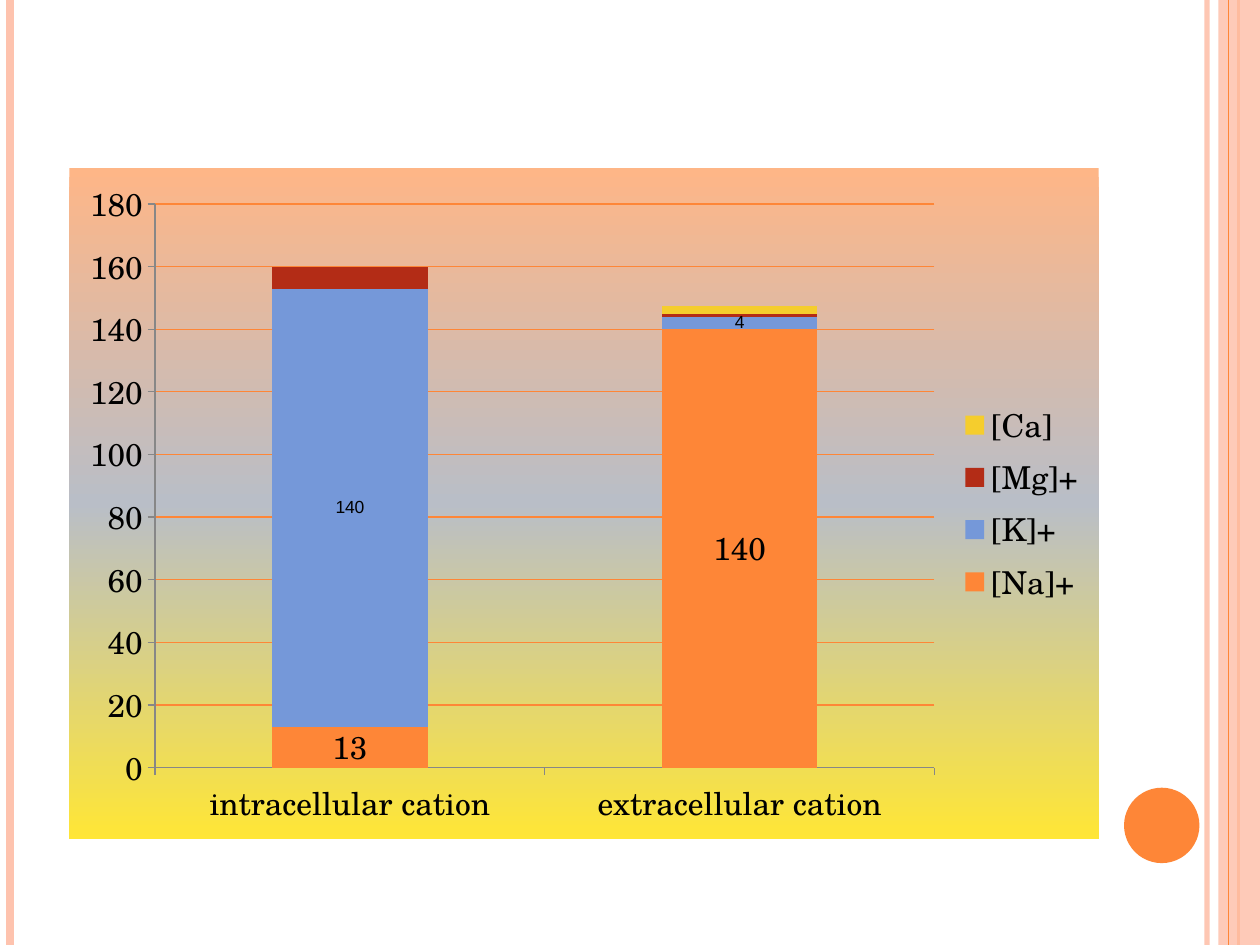
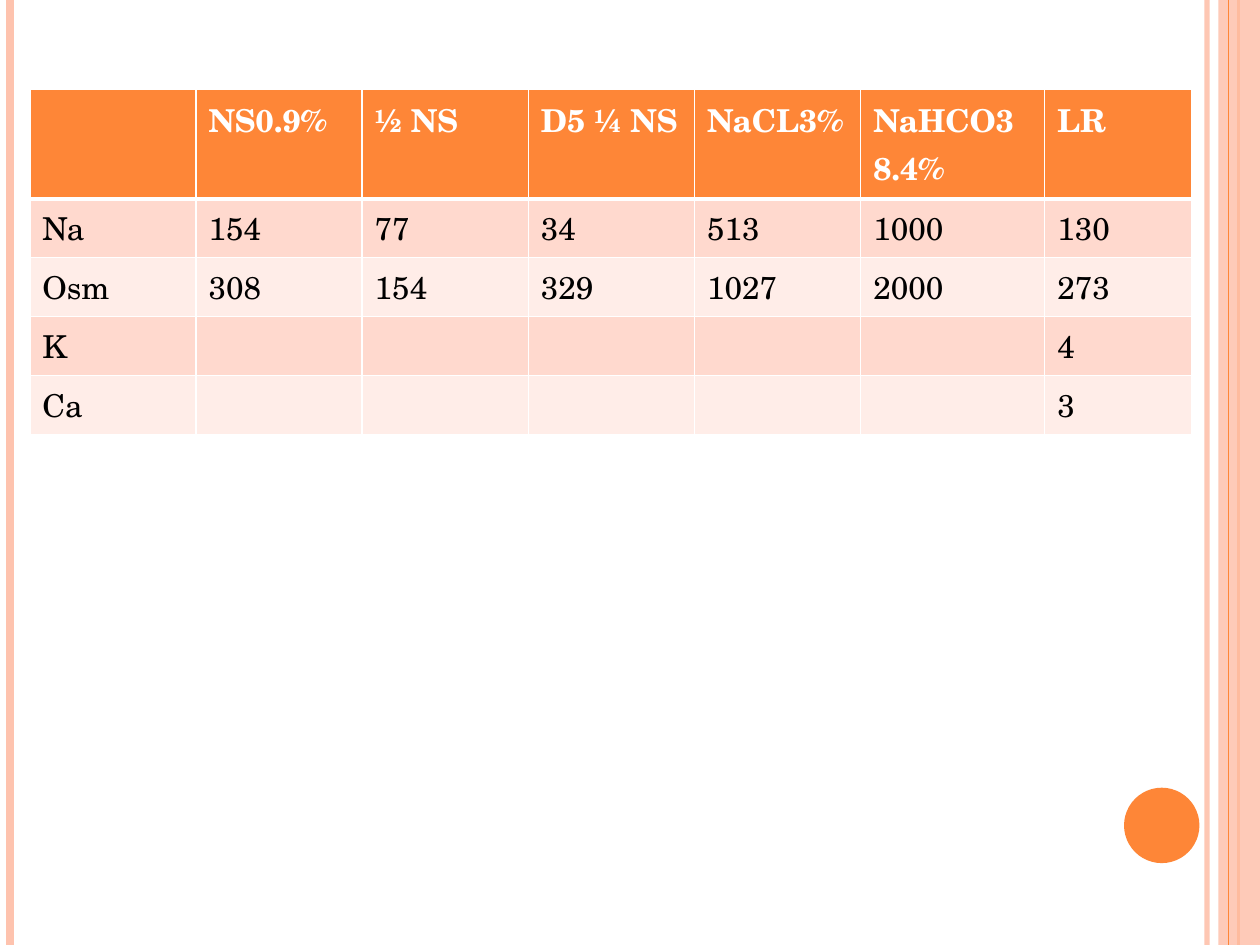
from lxml import etree
from pptx import Presentation, util as u
from pptx.chart import data
from pptx.dml import color
from pptx.enum import chart as ch, shapes
from pptx.oxml import ns

FONT = "TeX Gyre Schola"
ORANGE, PEACH, WHITE, BLACK, GRAY = "FE8637", "FEC3AE", "FFFFFF", "000000", "878787"
BANDS = "FFD9CE", "FFEDE8"
WIDE, HIGH = 25.4, 19.05

# Each rule: x in cm, colour, width in points, opacity in percent
BACK = [(24.33, PEACH, 3, 93), (0.21, PEACH, 4.5, 100), (24.97, ORANGE, 1.5, 100)]
FRONT = [(24.77, ORANGE, 0.75, 100)]

CATS = "intracellular cation", "extracellular cation"
IONS = [("[Na]+", (13, 140), ORANGE, {"size": u.Pt(18), "name": FONT}),
        ("[K]+", (140, 4), "7598D9", {"size": u.Pt(10), "name": "Arial"}),
        ("[Mg]+", (7, 1), "B32C16", None),
        ("[Ca]", (None, 2.5), "F5CD2D", None)]
SKY = [(0, "FEB687"), (50, "B9BEC7"), (100, "FFE636")]

FLUIDS = [
    ["", "NS0.9%", "½ NS", "D5 ¼ NS", "NaCL3%", "NaHCO3 8.4%", "LR"],
    ["Na", "154", "77", "34", "513", "1000", "130"],
    ["Osm", "308", "154", "329", "1027", "2000", "273"],
    ["K", "", "", "", "", "", "4"],
    ["Ca", "", "", "", "", "", "3"],
]
COLS = [3.35] * 5 + [3.71, 2.97]


def rgb(code):
    return color.RGBColor.from_string(code)


def box(*sides):
    return [u.Cm(side) for side in sides]


def style(font, hue, **form):
    font.color.rgb = rgb(hue)
    for key, val in form.items():
        setattr(font, key, val)


def sub(node, tag, **form):
    """Append a child element such as a:ln."""
    return etree.SubElement(node, ns.qn(tag), {k: str(v) for k, v in form.items()})


def paint(fill, code, alpha=100):
    fill.solid()
    fill.fore_color.rgb = rgb(code)
    if alpha < 100:
        hue = fill._xPr.find(".//" + ns.qn("a:srgbClr"))
        sub(hue, "a:alpha", val=alpha * 1000)


def rules(slide, specs):
    for x, hue, width, alpha in specs:
        line = slide.shapes.add_connector(
            shapes.MSO_CONNECTOR.STRAIGHT, *box(x, 0, x, HIGH))
        line.line.width = u.Pt(width)
        paint(line.line.fill, hue, alpha)
        sub(line._element.spPr, "a:effectLst")


def plain(slide, kind, place, hue, alpha=100):
    shape = slide.shapes.add_shape(kind, *box(*place))
    shape.shadow.inherit = False
    shape.line.fill.background()
    paint(shape.fill, hue, alpha)


def frame(slide):
    """Draw the side bands and the corner disc that all slides share."""
    rules(slide, BACK)
    plain(slide, shapes.MSO_SHAPE.RECTANGLE, (24.56, 0, WIDE - 24.56, HIGH), PEACH, 87)
    rules(slide, FRONT)
    plain(slide, shapes.MSO_SHAPE.OVAL, (22.66, 15.88, 1.52, 1.52), ORANGE)


def shade(chart, stops):
    """Fill the chart area with a gradient from top to bottom."""
    props = etree.Element(ns.qn("c:spPr"))
    grad = sub(props, "a:gradFill", rotWithShape=1)
    row = sub(grad, "a:gsLst")
    for pos, hue in stops:
        sub(sub(row, "a:gs", pos=pos * 1000), "a:srgbClr", val=hue)
    sub(grad, "a:lin", ang=90 * 60000, scaled=0)
    sub(sub(props, "a:ln"), "a:noFill")
    chart._chartSpace.find(ns.qn("c:chart")).addnext(props)


def cations(slide, place):
    """Stacked columns of the cations inside and outside the cell."""
    info = data.CategoryChartData()
    info.categories = CATS
    for name, vals, *_ in IONS:
        info.add_series(name, vals)
    chart = slide.shapes.add_chart(
        ch.XL_CHART_TYPE.COLUMN_STACKED, *box(*place), info).chart
    style(chart.font, BLACK, size=u.Pt(18), name=FONT)
    shade(chart, SKY)
    chart.has_title = False
    chart.has_legend = True
    chart.legend.position = ch.XL_LEGEND_POSITION.RIGHT
    chart.legend.include_in_layout = False

    plot = chart.plots[0]
    plot.gap_width, plot.overlap, plot.vary_by_categories = 150, 100, False
    for bar, (_, _, hue, form) in zip(plot.series, IONS):
        bar.invert_if_negative = False
        paint(bar.format.fill, hue)
        if form:
            bar.data_labels.show_value = True
            style(bar.data_labels.font, BLACK, **form)

    for axis in chart.category_axis, chart.value_axis:
        axis.major_tick_mark = ch.XL_TICK_MARK.OUTSIDE
        axis.format.line.width = u.Pt(0.75)
        paint(axis.format.line.fill, GRAY)
    scale = chart.value_axis
    scale.minimum_scale, scale.maximum_scale, scale.major_unit = 0, 180, 20
    grid = scale.major_gridlines.format.line
    grid.width = u.Pt(0.75)
    paint(grid.fill, ORANGE)


def edge(cell, **widths):
    """Draw white borders; widths are points by side L, R, T, B."""
    for side, width in widths.items():
        line = sub(cell._tc.get_or_add_tcPr(), "a:ln" + side, w=u.Pt(width))
        sub(sub(line, "a:solidFill"), "a:srgbClr", val=WHITE)


def fluids(slide, place):
    """Table of the ion content of each infusion fluid."""
    table = slide.shapes.add_table(len(FLUIDS), len(COLS), *box(*place)).table
    for col, width in zip(table.columns, COLS):
        col.width = u.Cm(width)
    for r, words in enumerate(FLUIDS):
        table.rows[r].height = u.Cm(1.04)
        head = r == 0
        for c, word in enumerate(words):
            cell = table.cell(r, c)
            edge(cell, L=1, R=1, T=3 if r == 1 else 1, B=3 if head else 1)
            paint(cell.fill, ORANGE if head else BANDS[(r - 1) % 2])
            cell.text = word
            style(cell.text_frame.paragraphs[0].font, WHITE if head else BLACK,
                  size=u.Pt(18), name=FONT, bold=head)


def main():
    deck = Presentation()
    deck.slide_width, deck.slide_height = box(WIDE, HIGH)
    for draw, place in [(cations, (1.4, 3.38, 20.75, 13.54)),
                        (fluids, (0.6, 1.79, sum(COLS), 5.2))]:
        slide = deck.slides.add_slide(deck.slide_layouts[6])
        frame(slide)
        draw(slide, place)
    deck.save("out.pptx")


if __name__ == "__main__":
    main()
